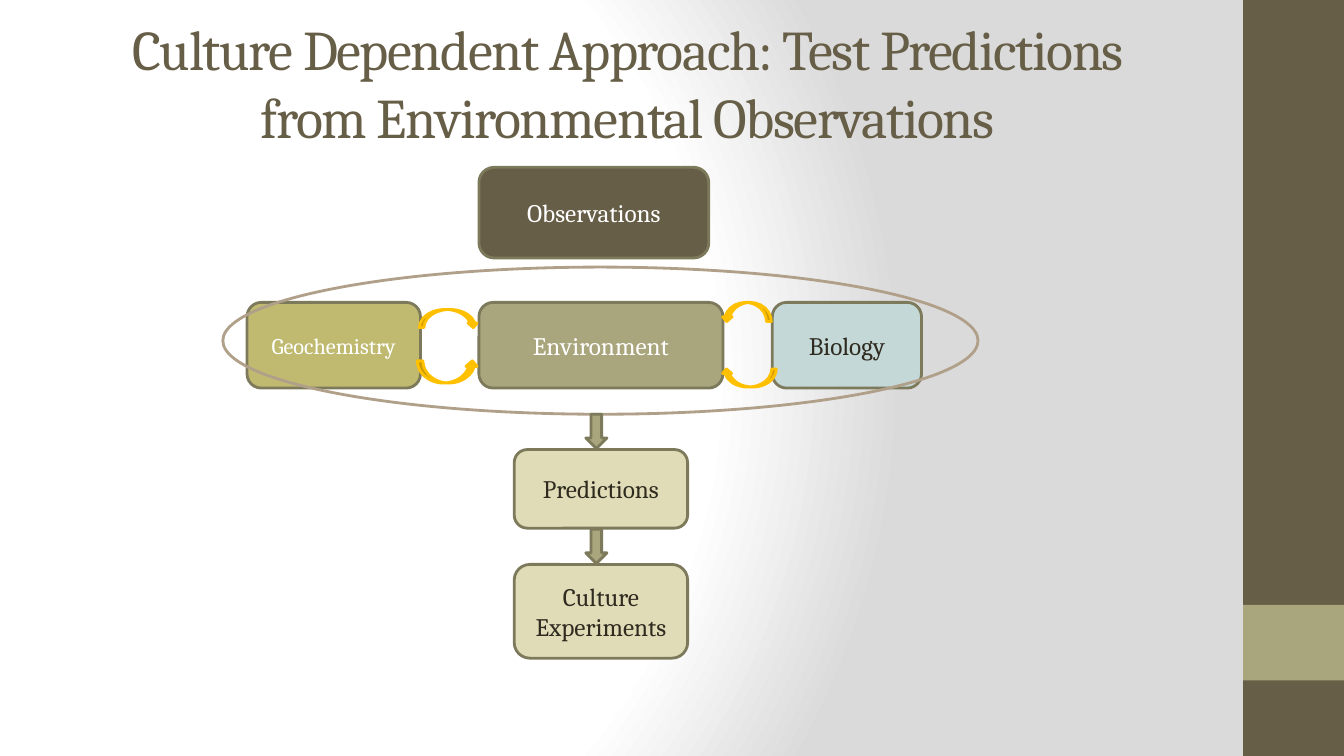
from lxml.etree import SubElement
from pptx import Presentation
from pptx.dml.color import RGBColor
from pptx.enum.shapes import MSO_SHAPE
from pptx.enum.text import MSO_ANCHOR, MSO_AUTO_SIZE, PP_ALIGN
from pptx.oxml.ns import qn
from pptx.util import Inches, Pt

BROWN = "675E47"
SAGE = "A9A57C"
OLIVE = "7D7A5C"
CREAM = "DFDCB7"
DARK = "2F2B20"
WHITE = "FFFFFF"
GOLD = "FFC000"


def colour(value):
    return RGBColor.from_string(value)


class FlowSlide:
    font = "Cambria"
    line_width = Pt(2)

    def __init__(self, page):
        self.page = page

    def background(self, stops, focus):
        self.page.background.fill.solid()
        properties = self.page.element.cSld.find(qn("p:bg")).find(qn("p:bgPr"))
        properties.remove(properties.find(qn("a:solidFill")))
        gradient = SubElement(properties, qn("a:gradFill"), rotWithShape="1")
        properties.insert(0, gradient)
        stop_list = SubElement(gradient, qn("a:gsLst"))
        for percent, value in stops:
            stop = SubElement(stop_list, qn("a:gs"), pos=str(percent * 1000))
            SubElement(stop, qn("a:srgbClr"), val=value)
        circle = SubElement(gradient, qn("a:path"))
        circle.set("path", "circle")
        edges = {side: str(percent * 1000) for side, percent in zip("ltrb", focus)}
        SubElement(circle, qn("a:fillToRect"), edges)

    def label(self, box, text, size, ink):
        frame = box.text_frame
        frame.word_wrap = True
        frame.auto_size = MSO_AUTO_SIZE.NONE
        frame.vertical_anchor = MSO_ANCHOR.MIDDLE
        para = frame.paragraphs[0]
        para.alignment = PP_ALIGN.CENTER
        span = para.add_run()
        span.text = text
        span.font.name = self.font
        span.font.size = Pt(size)
        span.font.color.rgb = colour(ink)

    def title(self, text, left, top, width, height):
        box = self.page.shapes.title
        box.left, box.top = Inches(left), Inches(top)
        box.width, box.height = Inches(width), Inches(height)
        self.label(box, text, 40, BROWN)
        for properties in box.element.iter(qn("a:rPr")):
            properties.set("spc", "-100")

    def shape(self, kind, left, top, width, height, fill=None, line=None, flip=False):
        shape = self.page.shapes.add_shape(
            kind, Inches(left), Inches(top), Inches(width), Inches(height))
        shape.shadow.inherit = False
        if fill:
            shape.fill.solid()
            shape.fill.fore_color.rgb = colour(fill)
        else:
            shape.fill.background()
        if line:
            shape.line.color.rgb = colour(line)
            shape.line.width = self.line_width
        else:
            shape.line.fill.background()
        if flip:
            shape.element.spPr.xfrm.set("flipH", "1")
        return shape

    def step(self, text, left, top, width, height, fill, ink, size=18):
        box = self.shape(MSO_SHAPE.ROUNDED_RECTANGLE, left, top, width, height, fill, OLIVE)
        self.label(box, text, size, ink)


def main():
    deck = Presentation()
    deck.slide_width, deck.slide_height = Inches(13.33), Inches(7.5)
    slide = FlowSlide(deck.slides.add_slide(deck.slide_layouts[5]))
    slide.background([(0, WHITE), (75, WHITE), (100, "DADADA")], (20, 50, 100, 50))

    for top, height, fill in [(0, 7.5, BROWN), (6, 0.75, SAGE)]:
        slide.shape(MSO_SHAPE.RECTANGLE, 12.33, top, 1, height, fill)

    slide.title("Culture Dependent Approach: Test Predictions from Environmental Observations",
                0.67, 0.19, 11.11, 1.25)

    row_top, row_height = 3, 0.85
    slide.step("Environment", 4.75, row_top, 2.42, row_height, SAGE, WHITE)
    slide.step("Geochemistry", 2.45, row_top, 1.72, row_height, "C0BA71", WHITE, size=16)
    slide.step("Biology", 7.66, row_top, 1.48, row_height, "C4D8D7", DARK)
    slide.step("Observations", 4.75, 1.66, 2.28, 0.9, BROWN, WHITE)
    slide.step("Predictions", 5.1, 4.46, 1.72, 0.78, CREAM, DARK)
    slide.step("Culture Experiments", 5.1, 5.6, 1.72, 0.93, CREAM, DARK)

    slide.shape(MSO_SHAPE.OVAL, 2.21, 2.65, 7.49, 1.46, line="B1A089")

    over, under = MSO_SHAPE.CURVED_DOWN_ARROW, MSO_SHAPE.CURVED_UP_ARROW
    for kind, left, top, width, height, flip in [
        (over, 4.16, 3.07, 0.58, 0.18, False),
        (over, 7.16, 3, 0.49, 0.19, True),
        (under, 4.14, 3.58, 0.6, 0.22, False),
        (under, 7.16, 3.66, 0.54, 0.18, True),
    ]:
        slide.shape(kind, left, top, width, height, GOLD, GOLD, flip)

    for top in (4.11, 5.25):
        slide.shape(MSO_SHAPE.DOWN_ARROW, 5.81, top, 0.21, 0.34, SAGE, OLIVE)

    deck.save("out.pptx")


if __name__ == "__main__":
    main()
